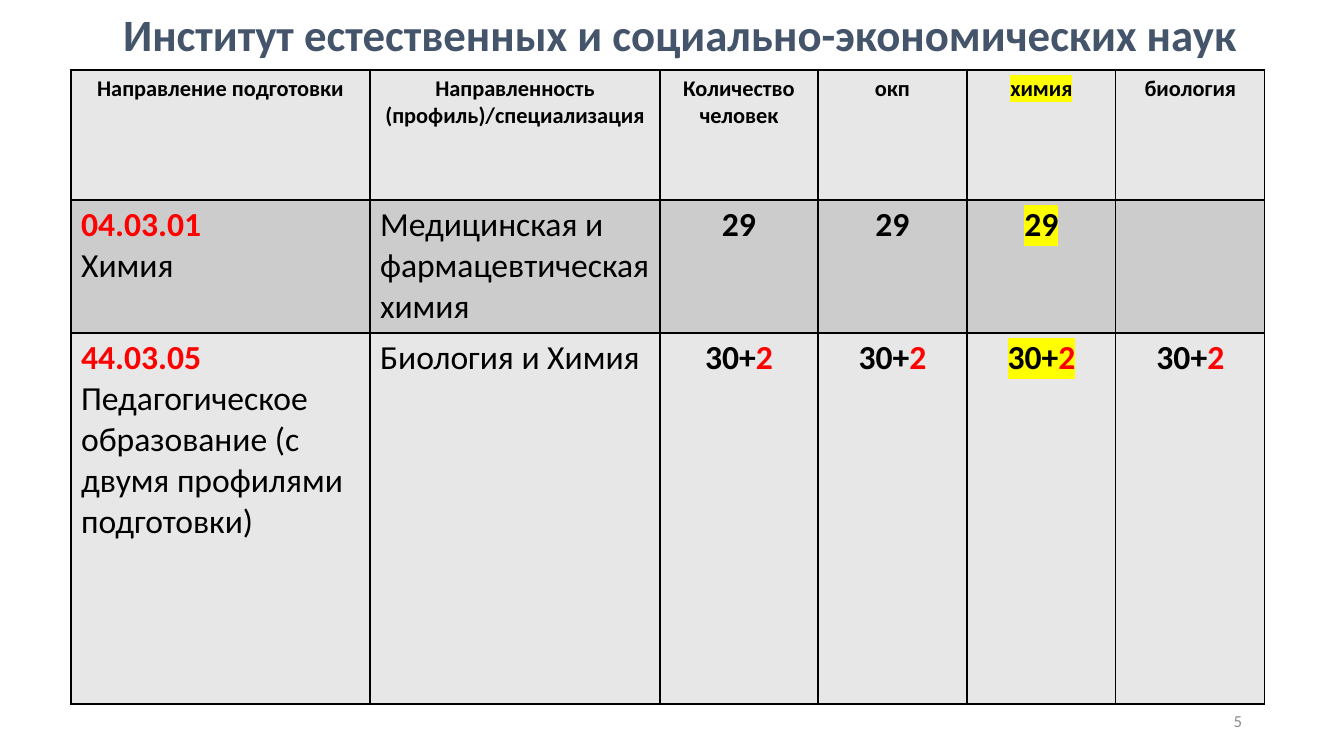
"""Build the slide with the enrolment table of the institute."""
from lxml import etree
from pptx import Presentation
from pptx import util as u
from pptx.dml.color import RGBColor
from pptx.enum import text
from pptx.oxml import ns

COLORS = {"title": "44546A", "ink": "000000", "accent": "FF0000", "mark": "FFFF00",
          "light": "E7E7E7", "dark": "CCCCCC", "number": "8C8C8C"}
FONT = "Calibri"
PX = u.Inches(1) / 100.8

TITLE = "Институт естественных и социально-экономических наук"
PAGE_NUMBER = "5"
HEADER = ["Направление подготовки", "Направленность (профиль)/специализация",
          "Количество человек", "окп", "химия", "биология"]
PROGRAMMES = [
    (("04.03.01", "Химия"), "Медицинская и фармацевтическая химия",
     "29", "29", "29", ""),
    (("44.03.05", "Педагогическое образование (с двумя профилями подготовки)"),
     "Биология и Химия", "30+2", "30+2", "30+2", "30+2"),
]
COLUMN_WIDTHS = [299, 290, 158, 149, 149, 149]
ROW_HEIGHTS = [130, 133, 371]
TABLE_LEFT, TABLE_TOP = 71, 70
TEXT_MARGIN_RIGHT = 5
FIRST_COUNT_COLUMN = 2
MARKED_COLUMN = HEADER.index("химия")


def px(length):
    return u.Emu(round(length * PX))


def rgb(name):
    return RGBColor.from_string(COLORS[name])


def style(para, size, bold, align):
    para.font.name, para.font.size, para.font.bold = FONT, u.Pt(size), bold
    para.alignment = align


def add_span(para, words, color, marked=False):
    span = para.add_run()
    span.text = words
    span.font.color.rgb = rgb(color)
    if marked:
        highlight = etree.SubElement(span.font._element, ns.qn("a:highlight"))
        etree.SubElement(highlight, ns.qn("a:srgbClr"), val=COLORS["mark"])


def add_label(page, place, words, size, bold, align, color):
    box = page.shapes.add_textbox(*map(px, place))
    frame = box.text_frame
    frame.word_wrap = True
    frame.vertical_anchor = text.MSO_ANCHOR.MIDDLE
    para = frame.paragraphs[0]
    style(para, size, bold, align)
    add_span(para, words, color)
    return para


def add_borders(cell):
    properties = cell._tc.get_or_add_tcPr()
    for index, side in enumerate(("lnL", "lnR", "lnT", "lnB")):
        line = etree.Element(ns.qn(f"a:{side}"), w=str(u.Pt(1)))
        fill = etree.SubElement(line, ns.qn("a:solidFill"))
        etree.SubElement(fill, ns.qn("a:srgbClr"), val=COLORS["ink"])
        properties.insert(index, line)


def fill_cell(cell, content, row, column):
    cell.fill.solid()
    cell.fill.fore_color.rgb = rgb("dark" if row % 2 else "light")
    add_borders(cell)
    is_header, is_count = row == 0, column >= FIRST_COUNT_COLUMN
    align = text.PP_ALIGN.CENTER if is_header or is_count else text.PP_ALIGN.LEFT
    if align == text.PP_ALIGN.LEFT:
        cell.margin_right = px(TEXT_MARGIN_RIGHT)
    lines = content if isinstance(content, tuple) else (content,)
    for index, words in enumerate(lines):
        frame = cell.text_frame
        para = frame.add_paragraph() if index else frame.paragraphs[0]
        is_code = len(lines) > 1 and index == 0
        style(para, 16 if is_header else 24, is_header or is_count or is_code, align)
        base, plus, extra = words.partition("+")
        marked = column == MARKED_COLUMN
        if words:
            add_span(para, base + plus, "accent" if is_code else "ink", marked)
        if extra:
            add_span(para, extra, "accent", marked)


def add_programme_table(page):
    rows = [HEADER, *PROGRAMMES]
    frame = page.shapes.add_table(
        len(rows), len(HEADER), px(TABLE_LEFT), px(TABLE_TOP),
        px(sum(COLUMN_WIDTHS)), px(sum(ROW_HEIGHTS)))
    table = frame.table
    for column, width in zip(table.columns, COLUMN_WIDTHS):
        column.width = px(width)
    for row, height in zip(table.rows, ROW_HEIGHTS):
        row.height = px(height)
    for row, contents in enumerate(rows):
        for column, content in enumerate(contents):
            fill_cell(table.cell(row, column), content, row, column)


def main():
    deck = Presentation()
    deck.slide_width, deck.slide_height = px(1344), px(756)
    page = deck.slides.add_slide(deck.slide_layouts[6])
    title = add_label(page, (101, 0, 1159, 74), TITLE, 32, True,
                      text.PP_ALIGN.CENTER, "title")
    title.line_spacing = 0.9
    add_programme_table(page)
    add_label(page, (950, 701, 302, 40), PAGE_NUMBER, 12, False,
              text.PP_ALIGN.RIGHT, "number")
    deck.save("out.pptx")


if __name__ == "__main__":
    main()
